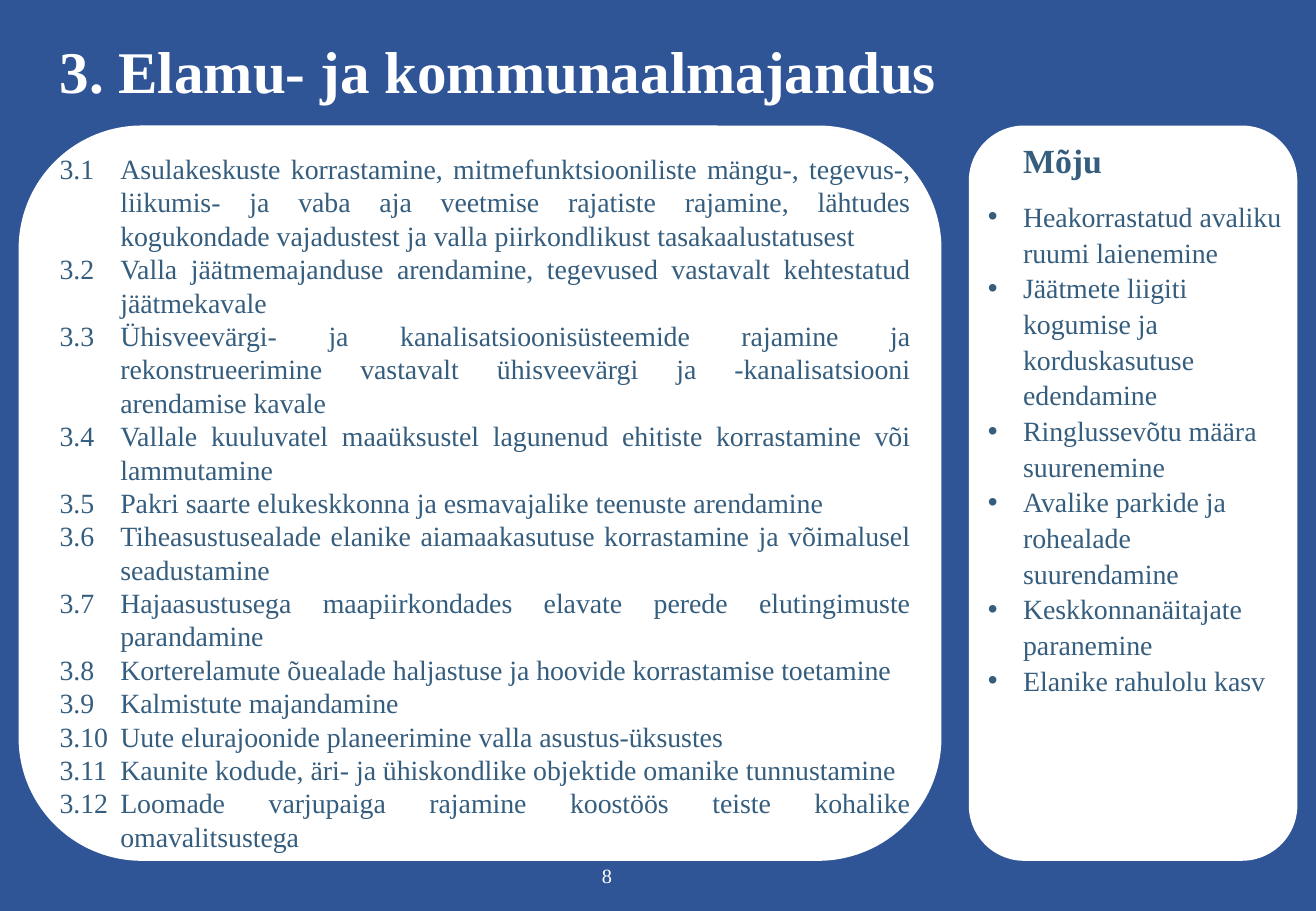
from pptx import Presentation
from pptx.dml.color import RGBColor
from pptx.enum.shapes import MSO_SHAPE
from pptx.enum.text import MSO_ANCHOR, MSO_AUTO_SIZE, PP_ALIGN
from pptx.oxml.ns import qn
from pptx.util import Inches, Pt
from lxml.etree import SubElement

TITLE = "3. Elamu- ja kommunaalmajandus"
CHAPTER = 3
TASKS = [
    "Asulakeskuste korrastamine, mitmefunktsiooniliste mängu-, tegevus-, liikumis- ja vaba aja "
    "veetmise rajatiste rajamine, lähtudes kogukondade vajadustest ja valla piirkondlikust "
    "tasakaalustatusest",
    "Valla jäätmemajanduse arendamine, tegevused vastavalt kehtestatud jäätmekavale",
    "Ühisveevärgi- ja kanalisatsioonisüsteemide rajamine ja rekonstrueerimine vastavalt "
    "ühisveevärgi ja -kanalisatsiooni arendamise kavale",
    "Vallale kuuluvatel maaüksustel lagunenud ehitiste korrastamine või lammutamine",
    "Pakri saarte elukeskkonna ja esmavajalike teenuste arendamine",
    "Tiheasustusealade elanike aiamaakasutuse korrastamine ja võimalusel seadustamine",
    "Hajaasustusega maapiirkondades elavate perede elutingimuste parandamine",
    "Korterelamute õuealade haljastuse ja hoovide korrastamise toetamine",
    "Kalmistute majandamine",
    "Uute elurajoonide planeerimine valla asustus-üksustes",
    "Kaunite kodude, äri- ja ühiskondlike objektide omanike tunnustamine",
    "Loomade varjupaiga rajamine koostöös teiste kohalike omavalitsustega",
]
IMPACT_HEADING = "Mõju"
IMPACTS = [
    "Heakorrastatud avaliku ruumi laienemine",
    "Jäätmete liigiti kogumise ja korduskasutuse edendamine",
    "Ringlussevõtu määra suurenemine",
    "Avalike parkide ja rohealade suurendamine",
    "Keskkonnanäitajate paranemine",
    "Elanike rahulolu kasv",
]
PAGE = "8"

BLUE, WHITE, INK = "2F5597", "FFFFFF", "355D7E"
FONT, BODY_SIZE = "Times New Roman", 16.5

# left, top, width, height in percent of the slide
PANELS = [(1.48, 13.87, 70, 80.53), (73.68, 13.87, 24.84, 80.53)]
TITLE_BOX = (4.06, 3.87, 91.78, 8.67)
TASK_BOX = (3.23, 16.67, 66.39, 76.93)
IMPACT_BOX = (73.68, 13.87, 24.84, 64.13)
PAGE_BOX = (45.24, 94.13, 1.75, 4)

prs = Presentation()
prs.slide_width, prs.slide_height = Inches(10.83), Inches(7.5)


def rgb(color):
    return RGBColor.from_string(color)


def place(box):
    """Turn percent shares into slide lengths."""
    sides = (prs.slide_width, prs.slide_height) * 2
    return [int(side * share / 100) for side, share in zip(sides, box)]


def prepare(sp, box, wrap=True):
    """Move a text shape to its box and return its text frame."""
    sp.left, sp.top, sp.width, sp.height = place(box)
    tf = sp.text_frame
    tf.auto_size, tf.word_wrap = MSO_AUTO_SIZE.NONE, wrap
    tf.vertical_anchor = MSO_ANCHOR.MIDDLE
    tf.margin_left = tf.margin_right = tf.margin_top = tf.margin_bottom = Inches(0.05)
    return tf


def write(p, text, size, color, bold=False, align=PP_ALIGN.LEFT, spacing=1.0,
          margin=0, hanging=0, bullet=None):
    p.alignment, p.line_spacing = align, spacing
    p.space_before = p.space_after = Pt(0)
    pPr = p._p.get_or_add_pPr()
    pPr.set("marL", str(Inches(margin)))
    pPr.set("indent", str(-Inches(hanging)))
    if bullet:
        SubElement(pPr, qn("a:buFont"), typeface="Arial")
        SubElement(pPr, qn("a:buChar"), char=bullet)
    else:
        SubElement(pPr, qn("a:buNone"))
    r = p.add_run()
    r.text = text
    r.font.name, r.font.size, r.font.bold = FONT, Pt(size), bold
    r.font.color.rgb = rgb(color)


def paragraphs(tf, count):
    return [tf.paragraphs[0]] + [tf.add_paragraph() for _ in range(count - 1)]


s = prs.slides.add_slide(prs.slide_layouts.get_by_name("Two Content"))
s.background.fill.solid()
s.background.fill.fore_color.rgb = rgb(BLUE)
title, task_list, impact_list = s.placeholders

for box in PANELS:
    panel = s.shapes.add_shape(MSO_SHAPE.ROUNDED_RECTANGLE, *place(box))
    panel.adjustments[0] = 0.167
    panel.shadow.inherit = False
    panel.fill.solid()
    panel.fill.fore_color.rgb = panel.line.color.rgb = rgb(WHITE)
    panel.line.width = Pt(1)
    s.shapes.element.insert(2, panel.element)  # behind the placeholders

write(prepare(title, TITLE_BOX).paragraphs[0], TITLE, 35, WHITE, bold=True, spacing=0.9)

tf = prepare(task_list, TASK_BOX)
for number, (p, task) in enumerate(zip(paragraphs(tf, len(TASKS)), TASKS), 1):
    write(p, f"{CHAPTER}.{number}\t{task}", BODY_SIZE, INK, align=PP_ALIGN.JUSTIFY,
          margin=0.59, hanging=0.5)

tf = prepare(impact_list, IMPACT_BOX)
heading, *items = paragraphs(tf, len(IMPACTS) + 1)
write(heading, IMPACT_HEADING, 20, INK, bold=True, margin=0.39)
heading.space_after = Pt(10)
for p, impact in zip(items, IMPACTS):
    write(p, impact, BODY_SIZE, INK, spacing=1.07, margin=0.39, hanging=0.29, bullet="•")

page = s.shapes.add_textbox(*place(PAGE_BOX))
write(prepare(page, PAGE_BOX, wrap=False).paragraphs[0], PAGE, 12, WHITE,
      align=PP_ALIGN.CENTER)

prs.save("out.pptx")
